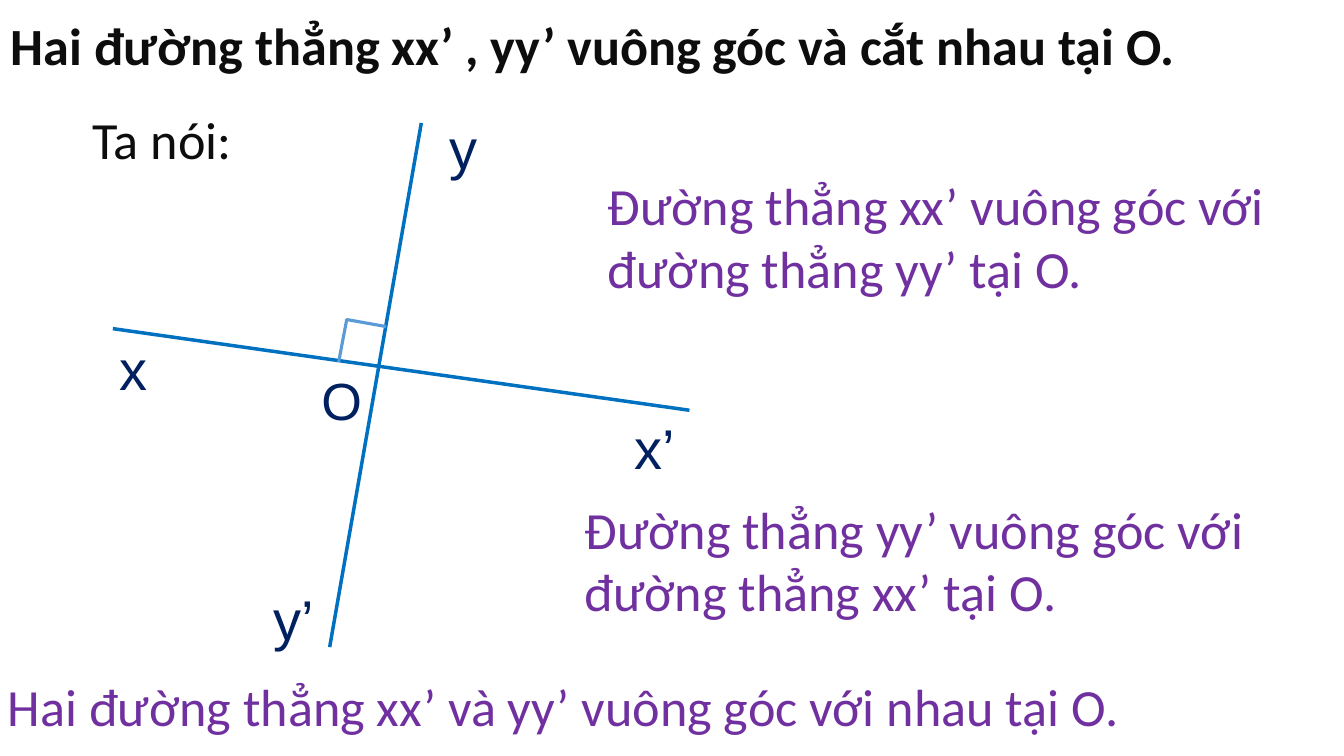
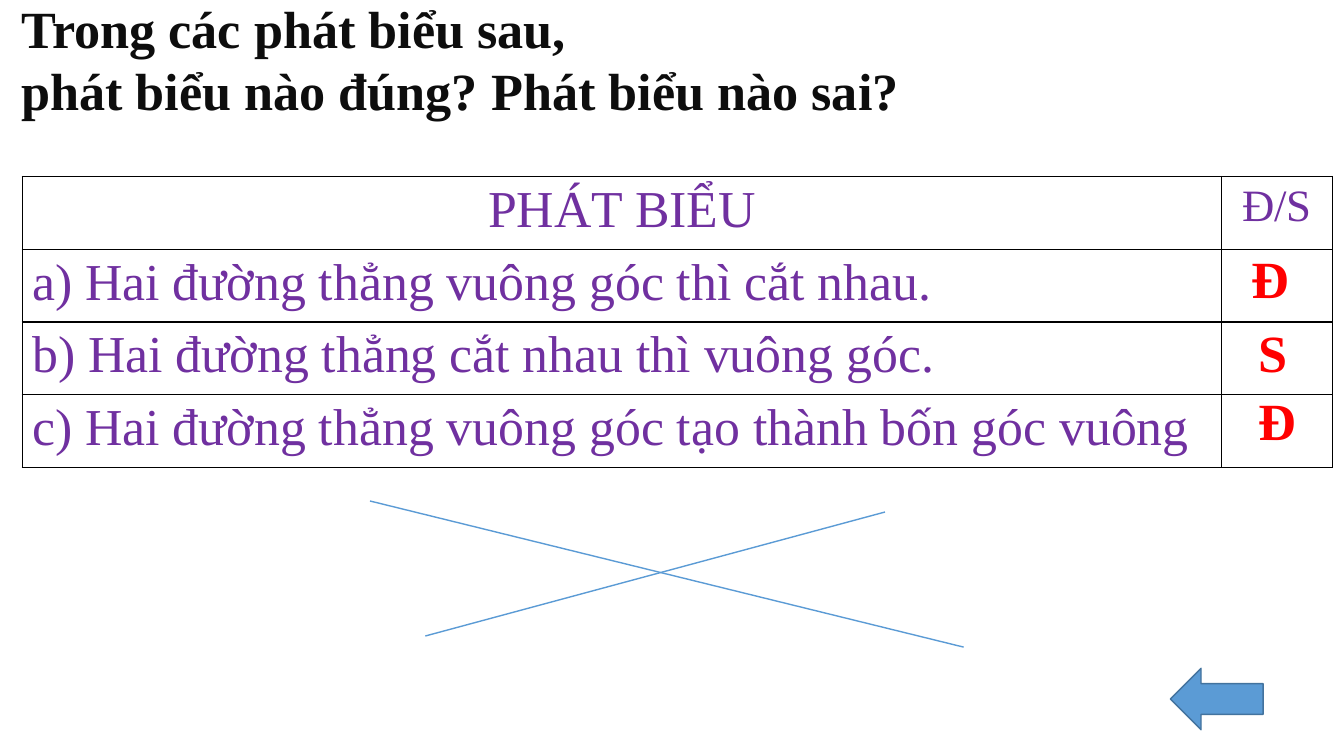
import pptx
import pptx.util
import pptx.dml.color
import pptx.enum.shapes
import pptx.enum.text
import pptx.oxml
import pptx.oxml.ns

Pt = pptx.util.Pt
RGB = pptx.dml.color.RGBColor.from_string
HUES = {
    "ink": "0D0D0D", "navy": "002060", "violet": "7030A0", "red": "FF0000",
    "blue": "0070C0", "sky": "5B9BD5", "steel": "43739E", "black": "000000",
}
SIZE = 37.3
SERIF = "Times New Roman"

deck = pptx.Presentation()
deck.slide_width = pptx.util.Inches(13.333)
deck.slide_height = pptx.util.Inches(7.5)
# All lengths are percentages of the slide: COL across, ROW down.
COL = deck.slide_width / 100
ROW = deck.slide_height / 100


def write(frame, lines, font, size, hue, bold=False):
    """Fill a text frame with one paragraph, of one run, per line."""
    for i, line in enumerate(lines):
        para = frame.add_paragraph() if i else frame.paragraphs[0]
        run = para.add_run()
        run.text = line
        run.font.name, run.font.size, run.font.bold = font, Pt(size), bold
        run.font.color.rgb = RGB(HUES[hue])


def place(slide, x, y, wide, lines, *style):
    """Add a wrapped text box, its height following the number of lines."""
    box = slide.shapes.add_textbox(
        int(x * COL), int(y * ROW), int(wide * COL), int(9.7 * len(lines) * ROW))
    box.text_frame.word_wrap = True
    write(box.text_frame, lines, *style)


blank = deck.slide_layouts[6]
angle, quiz = [deck.slides.add_slide(blank) for _ in range(2)]

# Straight lines of both slides
LINES = [
    (angle, 31.35, 16.27, 24.53, 85.6, "blue", 2.5),
    (angle, 8.4, 43.47, 51.3, 54.27, "blue", 2.5),
    (quiz, 31.65, 84.13, 65.85, 67.73, "sky", 1),
    (quiz, 27.53, 66.27, 71.7, 85.6, "sky", 1),
]
for slide, x1, y1, x2, y2, hue, width in LINES:
    line = slide.shapes.add_connector(
        pptx.enum.shapes.MSO_CONNECTOR.STRAIGHT,
        int(x1 * COL), int(y1 * ROW), int(x2 * COL), int(y2 * ROW))
    line.line.color.rgb = RGB(HUES[hue])
    line.line.width = Pt(width)
    line._element.spPr.append(pptx.oxml.ns.qn and pptx.oxml.parse_xml(
        f'<a:effectLst {pptx.oxml.ns.nsdecls("a")}/>'))

# Slide 1: right-angle mark, point names and statements
pen = angle.shapes.build_freeform(int(25.2 * COL), int(47.87 * ROW))
pen.add_line_segments(
    [(int(x * COL), int(y * ROW)) for x, y in [(25.8, 42.27), (28.73, 43.2)]],
    close=False)
mark = pen.convert_to_shape()
mark.shadow.inherit = False
mark.fill.background()
mark.line.color.rgb = RGB(HUES["sky"])
mark.line.width = Pt(2.25)

NAMES = [
    ("x", 8.18, 43.6, 40), ("x’", 46.5, 54, 40), ("y", 32.7, 14.4, 40),
    ("y’", 19.58, 76.7, 40), ("O", 23.18, 48, SIZE),
]
for name, x, y, size in NAMES:
    place(angle, x, y, 5.85, [name], "Arial", size, "navy")

TEXTS = [
    (0.08, 1.07, 98, "Hai đường thẳng xx’ , yy’ vuông góc và cắt nhau tại O.", "ink", True),
    (6.15, 13.6, 15.75, "Ta nói:", "ink", False),
    (44.48, 22.27, 53.85, "Đường thẳng xx’ vuông góc với đường thẳng yy’ tại O.", "violet", False),
    (42.75, 65.07, 57.25, "Đường thẳng yy’ vuông góc với đường thẳng xx’ tại O.", "violet", False),
    (-0.15, 88.53, 100, "Hai đường thẳng xx’ và yy’ vuông góc với nhau tại O.", "violet", False),
]
for x, y, wide, text, hue, bold in TEXTS:
    place(angle, x, y, wide, [text], "Calibri", SIZE, hue, bold)

# Slide 2: question, table, answers and back arrow
place(quiz, 0.83, -1.2, 67.5,
      ["Trong các phát biểu sau,", "phát biểu nào đúng? Phát biểu nào sai?"],
      SERIF, SIZE, "ink", True)

CELLS = [
    ("PHÁT BIỂU", "Đ/S"),
    ("a) Hai đường thẳng vuông góc thì cắt nhau.", ""),
    ("b) Hai đường thẳng cắt nhau thì vuông góc.", ""),
    ("c) Hai đường thẳng vuông góc tạo thành bốn góc vuông", ""),
]
WIDTHS = (89.25, 8.25)
TALL = 9.63
grid = quiz.shapes.add_table(
    len(CELLS), len(WIDTHS), int(1.65 * COL), int(23.33 * ROW),
    int(sum(WIDTHS) * COL), int(TALL * len(CELLS) * ROW)).table
grid.first_row = grid.horz_banding = False
for c, wide in enumerate(WIDTHS):
    grid.columns[c].width = int(wide * COL)
for r, row in enumerate(CELLS):
    grid.rows[r].height = int(TALL * ROW)
    for c, text in enumerate(row):
        cell = grid.cell(r, c)
        if text:
            write(cell.text_frame, [text], SERIF, 32 if c else 37, "violet")
        if r == 0:
            cell.text_frame.paragraphs[0].alignment = pptx.enum.text.PP_ALIGN.CENTER
        for side in "LRTB":
            cell._tc.get_or_add_tcPr().append(pptx.oxml.parse_xml(
                f'<a:ln{side} {pptx.oxml.ns.nsdecls("a")} w="12700"><a:solidFill>'
                f'<a:srgbClr val="{HUES["black"]}"/></a:solidFill></a:ln{side}>'))
        cell.fill.background()

for key, x, y in [("Đ", 92.4, 31.87), ("S", 92.93, 41.73), ("Đ", 92.93, 50.67)]:
    place(quiz, x, y, 5, [key], SERIF, SIZE, "red", True)

back = quiz.shapes.add_shape(
    pptx.enum.shapes.MSO_SHAPE.LEFT_ARROW,
    int(87.08 * COL), int(88.4 * ROW), int(6.9 * COL), int(8.13 * ROW))
back.shadow.inherit = False
back.fill.solid()
back.fill.fore_color.rgb = RGB(HUES["sky"])
back.line.color.rgb = RGB(HUES["steel"])
back.line.width = Pt(1)

deck.save("out.pptx")
